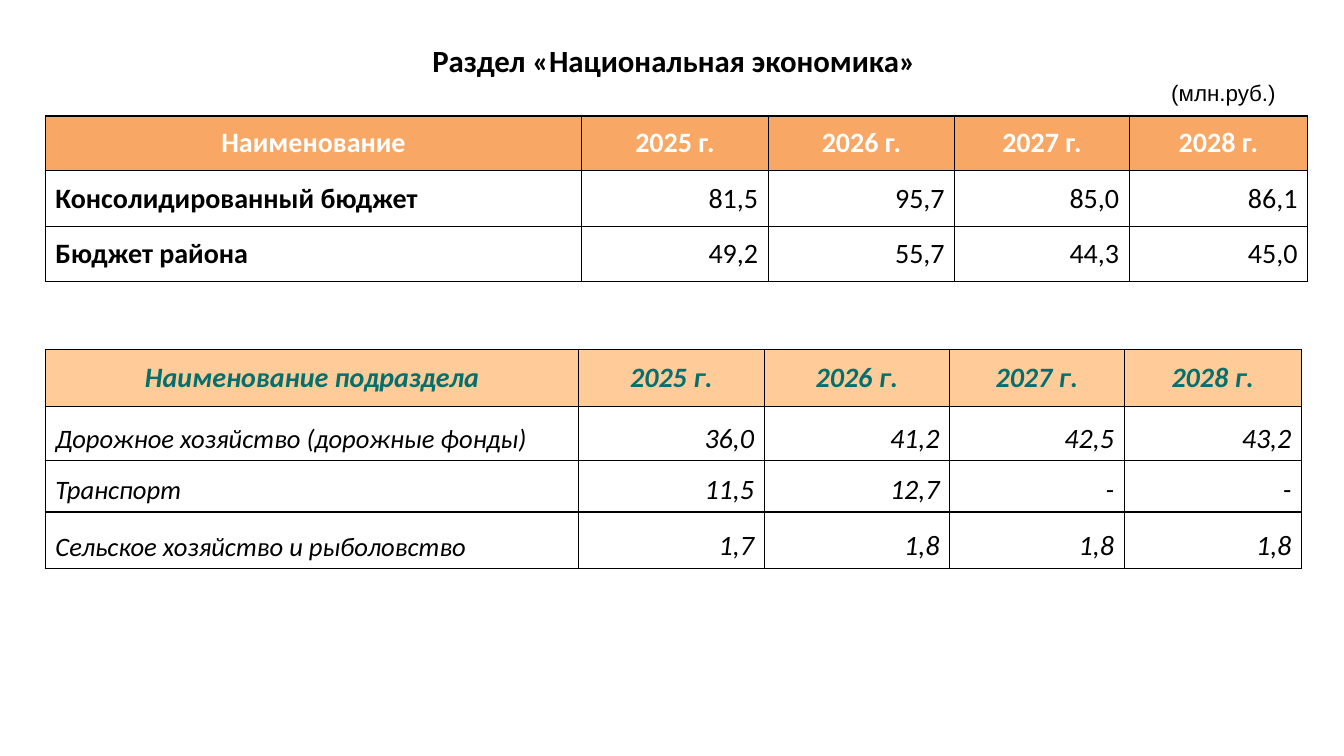
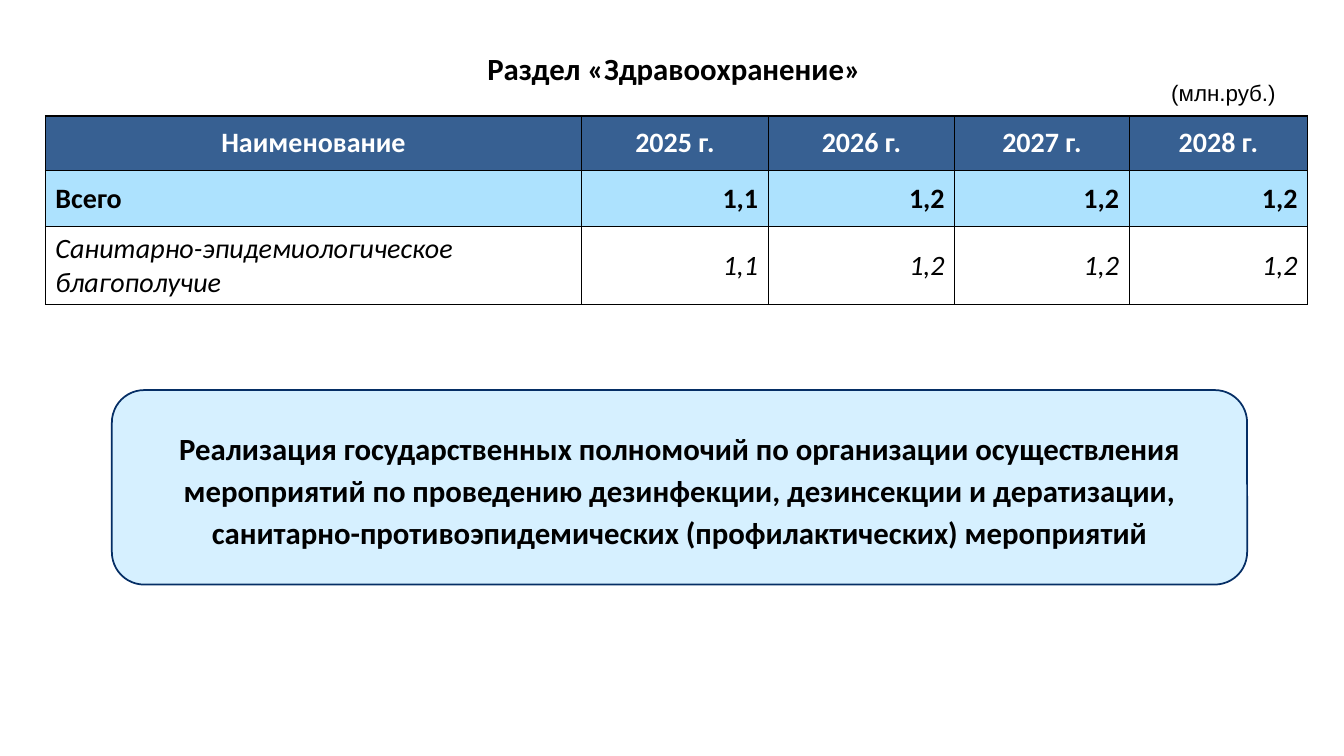
from lxml import etree
from pptx import Presentation
from pptx import util as u
from pptx.dml.color import RGBColor
from pptx.enum import shapes, text
from pptx.oxml import ns

PX = 9144  # EMU in one px, 100 px to the inch
COLORS = {
    "black": "000000", "white": "FFFFFF", "teal": "03706E",
    "orange": "F8A764", "peach": "FFCC99",
    "navy": "376092", "sky": "ADE2FE", "ice": "D6F0FF", "outline": "052E65",
}
YEARS = ["2025 г.", "2026 г.", "2027 г.", "2028 г."]
TABLE_LEFT, TABLE_TOP = 45, 115
MAIN_COLUMNS = [532, 185, 185, 173, 177]
SUBSECTION_COLUMNS = [529, 184, 184, 173, 176]

# Text formats
HEADING = {"name": "Calibri", "size": u.Pt(22), "bold": True, "italic": False}
UNIT = {"name": "Arial", "size": u.Pt(16), "bold": False, "italic": False}
PLAIN = {"name": "Calibri", "size": u.Pt(20), "bold": False, "italic": False}
BOLD = {**PLAIN, "bold": True}
ITALIC = {**PLAIN, "italic": True}
BOLD_ITALIC = {**BOLD, "italic": True}
SMALL_ITALIC = {**ITALIC, "size": u.Pt(19)}


def px(*lengths):
    return [u.Emu(length * PX) for length in lengths]


def rgb(color):
    return RGBColor.from_string(COLORS[color])


def set_fill(fill, color):
    if color is None:
        fill.background()
    else:
        fill.solid()
        fill.fore_color.rgb = rgb(color)


def write(frame, words, font_format, color="black", align=text.PP_ALIGN.CENTER):
    frame.word_wrap = True
    paragraph = frame.paragraphs[0]
    paragraph.alignment = align
    run = paragraph.add_run()
    run.text = words
    for name, value in font_format.items():
        setattr(run.font, name, value)
    run.font.color.rgb = rgb(color)
    return paragraph


def add_heading(slide, words, top):
    title = slide.shapes.title
    title.left, title.top, title.width, title.height = px(324, top, 689, 56)
    frame = title.text_frame
    frame.auto_size = text.MSO_AUTO_SIZE.NONE
    frame.vertical_anchor = text.MSO_ANCHOR.TOP
    frame.margin_top = px(13)[0]
    write(frame, words, HEADING)


def add_unit(slide):
    box = slide.shapes.add_textbox(*px(1122, 74, 183, 37))
    write(box.text_frame, "(млн.руб.)", UNIT)


def add_borders(cell):
    properties = cell._tc.get_or_add_tcPr()
    for index, side in enumerate(("lnL", "lnR", "lnT", "lnB")):
        line = etree.Element(ns.qn("a:" + side), w=str(u.Pt(1)))
        fill = etree.SubElement(line, ns.qn("a:solidFill"))
        etree.SubElement(fill, ns.qn("a:srgbClr"), val=COLORS["black"])
        properties.insert(index, line)


def header(label, fill, color="white", font_format=BOLD, height=54):
    return {"values": [label] + YEARS, "height": height, "fill": fill,
            "color": color, "label": font_format, "number": font_format,
            "aligns": (text.PP_ALIGN.CENTER, text.PP_ALIGN.CENTER)}


def body(values, height, label=BOLD, number=PLAIN, fill=None,
         anchor=text.MSO_ANCHOR.MIDDLE):
    return {"values": values, "height": height, "label": label,
            "number": number, "fill": fill, "anchor": anchor}


def add_table(slide, top, columns, rows):
    heights = [row["height"] for row in rows]
    table = slide.shapes.add_table(
        len(rows), len(columns),
        *px(TABLE_LEFT, top, sum(columns), sum(heights))).table
    table.horz_banding = False
    for column, width in zip(table.columns, px(*columns)):
        column.width = width
    for table_row, height, row in zip(table.rows, px(*heights), rows):
        table_row.height = height
        label_align, number_align = row.get(
            "aligns", (text.PP_ALIGN.LEFT, text.PP_ALIGN.RIGHT))
        for index, (cell, value) in enumerate(zip(table_row.cells, row["values"])):
            cell.vertical_anchor = row.get("anchor", text.MSO_ANCHOR.MIDDLE)
            set_fill(cell.fill, row["fill"])
            add_borders(cell)
            write(cell.text_frame, value, row["number" if index else "label"],
                  row.get("color", "black"),
                  number_align if index else label_align)


def add_callout(slide, words):
    shape = slide.shapes.add_shape(
        shapes.MSO_SHAPE.ROUNDED_RECTANGLE, *px(111, 387, 1126, 193))
    shape.shadow.inherit = False
    set_fill(shape.fill, "ice")
    shape.line.color.rgb = rgb("outline")
    shape.line.width = u.Pt(1.25)
    shape.text_frame.vertical_anchor = text.MSO_ANCHOR.MIDDLE
    write(shape.text_frame, words, HEADING).line_spacing = 1.14


def add_section(presentation, heading, heading_top, rows):
    slide = presentation.slides.add_slide(presentation.slide_layouts[5])
    add_heading(slide, heading, heading_top)
    add_unit(slide)
    add_table(slide, TABLE_TOP, MAIN_COLUMNS, rows)
    return slide


def main():
    presentation = Presentation()
    presentation.slide_width, presentation.slide_height = u.Inches(13.33), u.Inches(7.5)

    # National economy
    slide = add_section(presentation, "Раздел «Национальная экономика»", 28, [
        header("Наименование", "orange"),
        body(["Консолидированный бюджет", "81,5", "95,7", "85,0", "86,1"], 56),
        body(["Бюджет района", "49,2", "55,7", "44,3", "45,0"], 54),
    ])
    subsections = [
        (54, ["Дорожное хозяйство (дорожные фонды)", "36,0", "41,2", "42,5", "43,2"]),
        (51, ["Транспорт", "11,5", "12,7", "-", "-"]),
        (56, ["Сельское хозяйство и рыболовство", "1,7", "1,8", "1,8", "1,8"]),
    ]
    add_table(slide, 347, SUBSECTION_COLUMNS, [
        header("Наименование подраздела", "peach", "teal", BOLD_ITALIC, 56),
        *(body(values, height, SMALL_ITALIC, ITALIC, anchor=text.MSO_ANCHOR.BOTTOM)
          for height, values in subsections),
    ])

    # Health care
    slide = add_section(presentation, "Раздел «Здравоохранение»", 36, [
        header("Наименование", "navy"),
        body(["Всего", "1,1", "1,2", "1,2", "1,2"], 56, number=BOLD, fill="sky"),
        body(["Санитарно-эпидемиологическое благополучие", "1,1", "1,2", "1,2", "1,2"],
             77, ITALIC, ITALIC),
    ])
    add_callout(slide, "Реализация государственных полномочий по организации "
                       "осуществления мероприятий по проведению дезинфекции, "
                       "дезинсекции и дератизации, санитарно-противоэпидемических "
                       "(профилактических) мероприятий")

    presentation.save("out.pptx")


if __name__ == "__main__":
    main()
